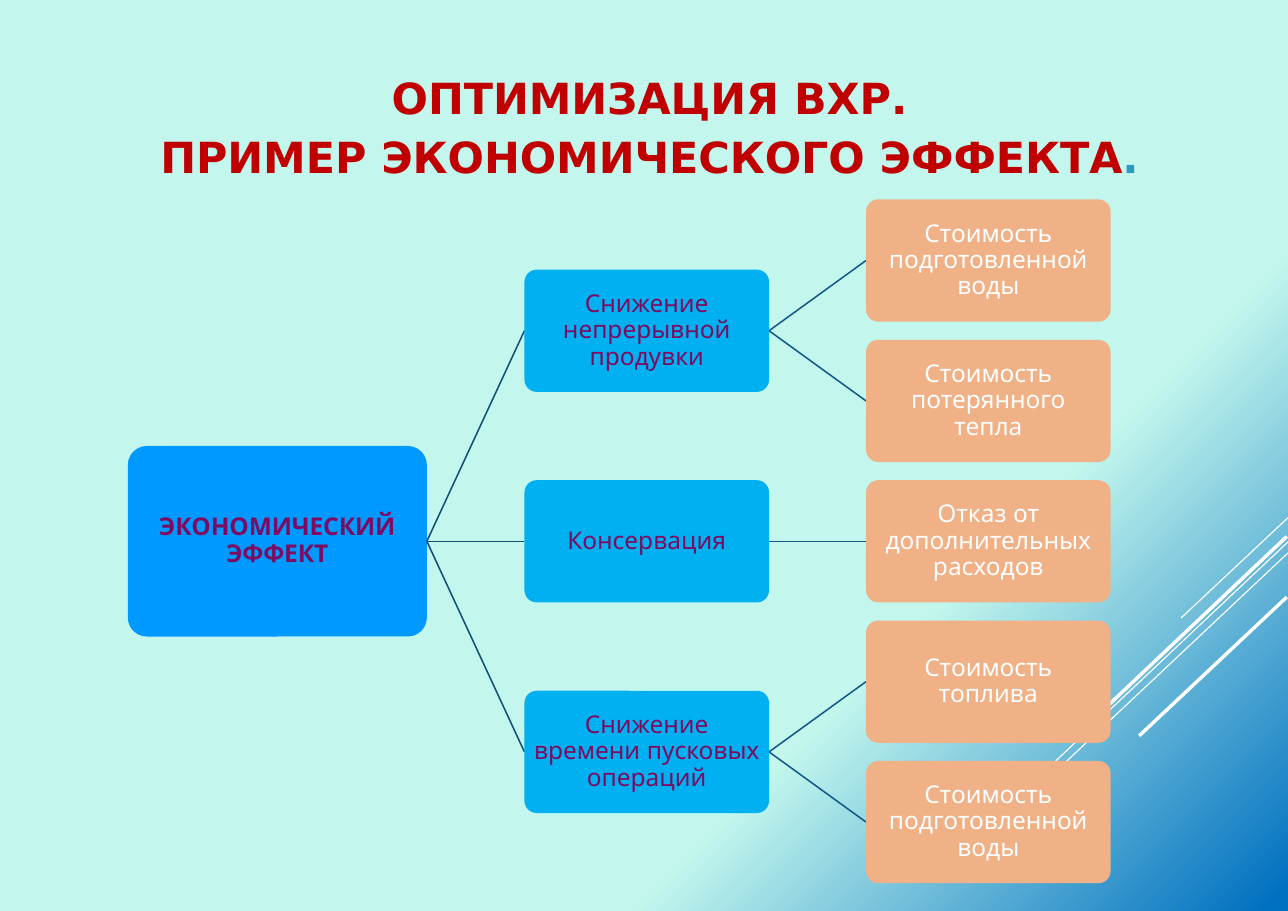
from lxml import etree
from pptx import Presentation
from pptx.dml.color import RGBColor
from pptx.enum.shapes import MSO_CONNECTOR, MSO_SHAPE
from pptx.enum.text import MSO_ANCHOR, MSO_AUTO_SIZE, PP_ALIGN
from pptx.oxml.ns import qn
from pptx.util import Inches, Pt

STRAIGHT = MSO_CONNECTOR.STRAIGHT
ROUNDED = MSO_SHAPE.ROUNDED_RECTANGLE
MIDDLE = MSO_ANCHOR.MIDDLE
NO_FIT = MSO_AUTO_SIZE.NONE
CENTER = PP_ALIGN.CENTER

MINT = RGBColor(0xC3, 0xF7, 0xED)
DEEP_BLUE = RGBColor(0x00, 0x70, 0xC0)
WHITE = RGBColor(0xFF, 0xFF, 0xFF)
RED = RGBColor(0xC0, 0x00, 0x00)
TEAL = RGBColor(0x2E, 0x97, 0xC4)
PLUM = RGBColor(0x7C, 0x0B, 0x61)
AZURE = RGBColor(0x00, 0x99, 0xFF)
SKY = RGBColor(0x00, 0xB0, 0xF0)
PEACH = RGBColor(0xF1, 0xB1, 0x87)
NAVY = RGBColor(0x10, 0x4E, 0x77)
STEEL = RGBColor(0x12, 0x58, 0x86)

TITLE_FONT = "DejaVu Sans"
BODY_FONT = "Quicksand"

ROOT = "ЭКОНОМИЧЕСКИЙ ЭФФЕКТ"
BRANCHES = [
    ("Снижение непрерывной продувки",
     ["Стоимость подготовленной воды", "Стоимость потерянного тепла"]),
    ("Консервация", ["Отказ от дополнительных расходов"]),
    ("Снижение времени пусковых операций",
     ["Стоимость топлива", "Стоимость подготовленной воды"]),
]
ROOT_X, BRANCH_X, LEAF_X = 9.92, 40.72, 67.24
ROOT_W, ROOT_H = 23.22, 20.92
NODE_W, NODE_H = 18.99, 13.42
FIRST_ROW, ROW_STEP = 28.6, 15.41

RAYS = [
    (100, 56.83, 91.7, 67.84, 0.75),
    (100, 59.49, 72.97, 95.53, 0.75),
    (100, 60.7, 82.81, 83.56, 0.75),
    (99.91, 58.89, 84.17, 79.93, 2.25),
    (99.91, 65.54, 88.45, 80.77, 2.25),
]


def add_text(p, text, size=16, font=BODY_FONT, color=WHITE, bold=False, spacing=0.9):
    p.alignment = CENTER
    p.line_spacing = spacing
    for i, line in enumerate(text.split("\n")):
        if i:
            p.add_line_break()
        r = p.add_run()
        r.text = line
        r.font.size = Pt(size)
        r.font.name = font
        r.font.bold = bold
        r.font.color.rgb = color


class Diagram:
    def __init__(self, prs):
        self.width, self.height = prs.slide_width, prs.slide_height
        self.slide = prs.slides.add_slide(prs.slide_layouts[5])

    def x(self, share):
        return round(self.width * share / 100)

    def y(self, share):
        return round(self.height * share / 100)

    def background(self, stops, angle):
        fill = self.slide.background.fill
        fill.gradient()
        fill.gradient_angle = angle
        for stop, (position, color) in zip(fill.gradient_stops, stops):
            stop.position = position
            stop.color.rgb = color

    def title(self, x, y, w, h, runs):
        sp = self.slide.shapes.title
        sp.left, sp.top, sp.width, sp.height = self.x(x), self.y(y), self.x(w), self.y(h)
        self.frame(sp.text_frame, 0.1)
        for text, color in runs:
            add_text(sp.text_frame.paragraphs[0], text, size=28, font=TITLE_FONT,
                     color=color, bold=True, spacing=1.15)

    def frame(self, tf, inset):
        tf.word_wrap = True
        tf.auto_size = NO_FIT
        tf.vertical_anchor = MIDDLE
        tf.margin_left = tf.margin_right = Inches(inset)
        tf.margin_top = tf.margin_bottom = Inches(inset)

    def line(self, x1, y1, x2, y2, color, width):
        cxn = self.slide.shapes.add_connector(
            STRAIGHT, self.x(x1), self.y(y1), self.x(x2), self.y(y2))
        cxn.line.color.rgb = color
        cxn.line.width = Pt(width)
        etree.SubElement(cxn._element.spPr, qn("a:effectLst"))

    def node(self, text, x, center, fill, w=NODE_W, h=NODE_H, **style):
        sp = self.slide.shapes.add_shape(
            ROUNDED, self.x(x), self.y(center - h / 2), self.x(w), self.y(h))
        sp.adjustments[0] = 0.1
        sp.shadow.inherit = False
        sp.fill.solid()
        sp.fill.fore_color.rgb = fill
        sp.line.fill.background()
        self.frame(sp.text_frame, 0.04)
        add_text(sp.text_frame.paragraphs[0], text, **style)


def main():
    prs = Presentation()
    prs.slide_width, prs.slide_height = Inches(11.69), Inches(8.27)
    s = Diagram(prs)
    s.background([(0.7, MINT), (0.99, DEEP_BLUE)], 315)
    for *ends, width in RAYS:
        s.line(*ends, WHITE, width)
    s.title(4.45, 5.93, 91.96, 15.24,
            [("ОПТИМИЗАЦИЯ ВХР.\nПРИМЕР ЭКОНОМИЧЕСКОГО ЭФФЕКТА", RED), (".", TEAL)])

    root_y = FIRST_ROW + 2 * ROW_STEP
    s.node(ROOT, ROOT_X, root_y, AZURE, ROOT_W, ROOT_H, color=PLUM, bold=True)
    row = 0
    for branch, leaves in BRANCHES:
        centers = [FIRST_ROW + ROW_STEP * (row + i) for i in range(len(leaves))]
        row += len(leaves)
        branch_y = sum(centers) / len(centers)
        s.line(ROOT_X + ROOT_W, root_y, BRANCH_X, branch_y, NAVY, 1)
        s.node(branch, BRANCH_X, branch_y, SKY, color=PLUM)
        for leaf, leaf_y in zip(leaves, centers):
            s.line(BRANCH_X + NODE_W, branch_y, LEAF_X, leaf_y, STEEL, 1)
            s.node(leaf, LEAF_X, leaf_y, PEACH)
    prs.save("out.pptx")


if __name__ == "__main__":
    main()
